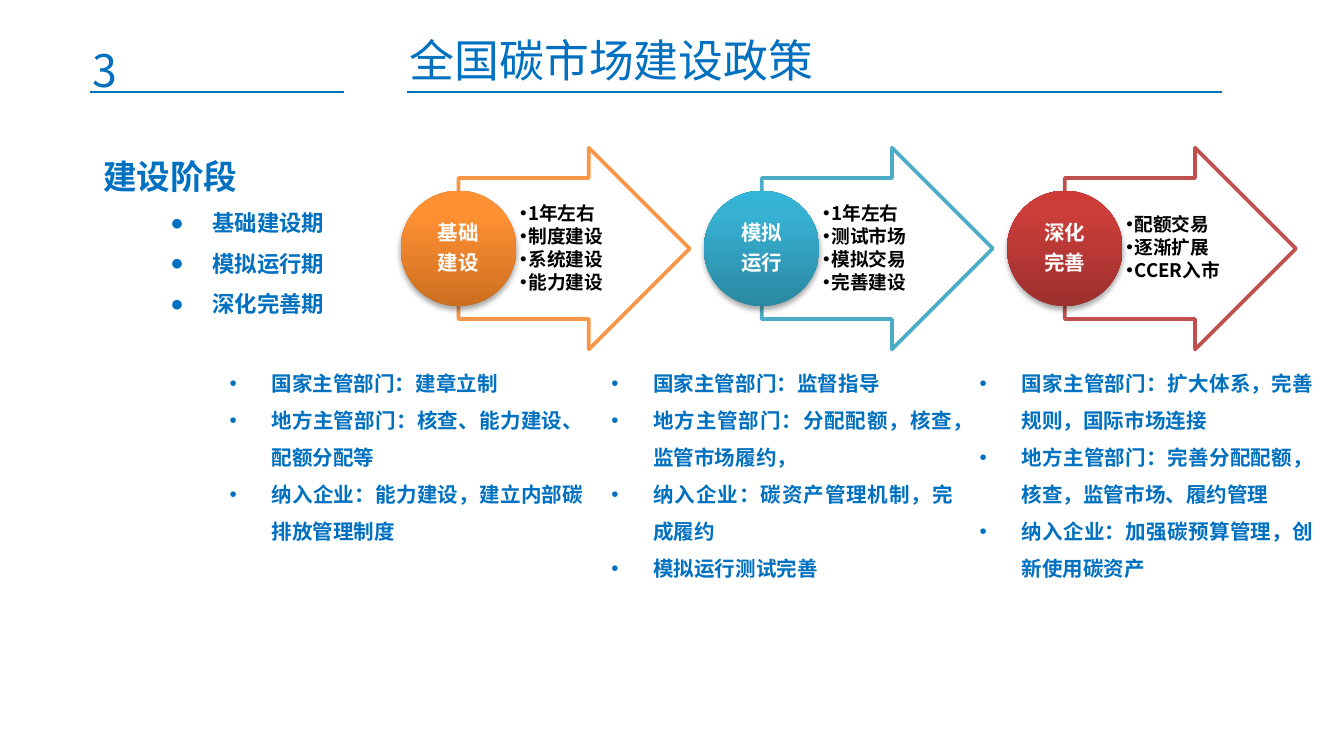
from lxml import etree
from pptx import Presentation
from pptx.dml.color import RGBColor
from pptx.enum.shapes import MSO_CONNECTOR, MSO_SHAPE
from pptx.enum.text import MSO_ANCHOR, PP_ALIGN
from pptx.oxml import parse_xml
from pptx.oxml.ns import qn
from pptx.util import Pt

STRAIGHT = MSO_CONNECTOR.STRAIGHT
ARROW, CIRCLE = MSO_SHAPE.RIGHT_ARROW, MSO_SHAPE.OVAL
LEFT, CENTER, JUSTIFY = PP_ALIGN.LEFT, PP_ALIGN.CENTER, PP_ALIGN.JUSTIFY
TOP, MIDDLE = MSO_ANCHOR.TOP, MSO_ANCHOR.MIDDLE
FONT, NUMBER_FONT = "Noto Sans CJK SC", "Noto Sans CJK JP"
BLUE, BLACK, WHITE = "0070C0", "000000", "FFFFFF"
NAMESPACE = 'xmlns:a="http://schemas.openxmlformats.org/drawingml/2006/main"'

TITLE = "全国碳市场建设政策"
SECTION_NUMBER = "3"
OVERVIEW = "建设阶段"
PERIODS = ["基础建设期", "模拟运行期", "深化完善期"]
STAGES = [
    {
        "name": ["基础", "建设"],
        "points": ["1年左右", "制度建设", "系统建设", "能力建设"],
        "line": "F79646",
        "gradient": [(0, "CC6E20"), (80, "FF9034"), (100, "FF9136")],
        "duties": [
            "国家主管部门：建章立制",
            "地方主管部门：核查、能力建设、配额分配等",
            "纳入企业：能力建设，建立内部碳排放管理制度",
        ],
        "duties_box": (115.9, 188.6, 203.8, 107.3),
    },
    {
        "name": ["模拟", "运行"],
        "points": ["1年左右", "测试市场", "模拟交易", "完善建设"],
        "line": "4BACC6",
        "gradient": [(0, "2A88A2"), (80, "37B1D2"), (100, "34B4D6")],
        "duties": [
            "国家主管部门：监督指导",
            "地方主管部门：分配配额，核查，监管市场履约，",
            "纳入企业：碳资产管理机制，完成履约",
            "模拟运行测试完善",
        ],
        "duties_box": (320.4, 188.6, 197.3, 146.9),
    },
    {
        "name": ["深化", "完善"],
        "points": ["配额交易", "逐渐扩展", "CCER入市"],
        "line": "C0504D",
        "gradient": [(0, "9C2F2D"), (80, "CB3E3A"), (100, "CE3B37")],
        "duties": [
            "国家主管部门：扩大体系，完善规则，国际市场连接",
            "地方主管部门：完善分配配额，核查，监管市场、履约管理",
            "纳入企业：加强碳预算管理，创新使用碳资产",
        ],
        "duties_box": (517.7, 188.6, 193, 127.4),
    },
]
RULES = [(48.2, 184.3), (218.2, 654.5)]
RULE_TOP = 49.4
STAGE_LEFT, STAGE_STEP = 214.7, 162.4
ARROW_TOP, ARROW_WIDTH, ARROW_HEIGHT = 79.2, 123.8, 108
DIAMETER = 61.9
NAME_SIZE = 43.8
POINTS_WIDTH, POINTS_HEIGHT = 60.5, 75.6


def color(value):
    """Turn a hex string into a colour."""
    return RGBColor.from_string(value)


def place(shape, left, top, width, height):
    """Move and size a shape, in points."""
    shape.left, shape.top = Pt(left), Pt(top)
    shape.width, shape.height = Pt(width), Pt(height)


def set_frame(shape, anchor=TOP, insets=(7.2, 3.6, 7.2, 3.6)):
    """Set wrapping, anchor and insets of a text frame."""
    frame = shape.text_frame
    frame.word_wrap = True
    frame.vertical_anchor = anchor
    frame.margin_left, frame.margin_top, frame.margin_right, frame.margin_bottom = map(Pt, insets)
    return frame


def add_paragraph(frame, text, size, value, bold=True, align=LEFT, spacing=1.0,
                  after=0, bullet=None, indent=0, hanging=0, font=FONT):
    """Write one paragraph, using the empty first one when it is free."""
    paragraph = frame.paragraphs[0]
    if paragraph.runs:
        paragraph = frame.add_paragraph()
    paragraph.alignment = align
    paragraph.line_spacing = spacing
    paragraph.space_before, paragraph.space_after = Pt(0), Pt(after)
    if bullet:
        properties = paragraph._p.get_or_add_pPr()
        properties.set("marL", str(Pt(indent)))
        properties.set("indent", str(Pt(-hanging)))
        etree.SubElement(properties, qn("a:buFont")).set("typeface", "Arial")
        etree.SubElement(properties, qn("a:buChar")).set("char", bullet)
    run = paragraph.add_run()
    run.text = text
    run.font.size, run.font.bold, run.font.name = Pt(size), bold, font
    run.font.color.rgb = color(value)
    etree.SubElement(run._r.get_or_add_rPr(), qn("a:ea")).set("typeface", font)


def add_text_box(slide, box, **frame_options):
    """Add a text box and return its frame."""
    return set_frame(slide.shapes.add_textbox(*map(Pt, box)), **frame_options)


def add_rule(slide, start, end):
    """Draw a horizontal heading rule."""
    rule = slide.shapes.add_connector(STRAIGHT, Pt(start), Pt(RULE_TOP), Pt(end), Pt(RULE_TOP))
    rule.line.color.rgb, rule.line.width = color(BLUE), Pt(1)
    etree.SubElement(rule._element.spPr, qn("a:effectLst"))


def add_circle(slide, left, top, stops):
    """Draw a circle with a vertical gradient and a soft shadow."""
    circle = slide.shapes.add_shape(CIRCLE, Pt(left), Pt(top), Pt(DIAMETER), Pt(DIAMETER))
    circle.line.fill.background()
    stop_xml = "".join(
        f'<a:gs pos="{position * 1000}"><a:srgbClr val="{value}"/></a:gs>' for position, value in stops)
    properties = circle._element.spPr
    properties.insert(2, parse_xml(
        f'<a:gradFill {NAMESPACE} rotWithShape="1"><a:gsLst>{stop_xml}</a:gsLst>'
        '<a:lin ang="16200000" scaled="0"/></a:gradFill>'))
    properties.append(parse_xml(
        f'<a:effectLst {NAMESPACE}><a:outerShdw blurRad="{Pt(3.1)}" dist="{Pt(1.8)}" dir="5400000" '
        f'rotWithShape="0"><a:srgbClr val="{BLACK}"><a:alpha val="35000"/></a:srgbClr>'
        '</a:outerShdw></a:effectLst>'))


def add_stage(slide, left, stage):
    """Draw one stage: arrow, points, circle and name."""
    middle = ARROW_TOP + ARROW_HEIGHT / 2
    arrow = slide.shapes.add_shape(
        ARROW, Pt(left + DIAMETER / 2), Pt(ARROW_TOP), Pt(ARROW_WIDTH), Pt(ARROW_HEIGHT))
    arrow.adjustments[0], arrow.adjustments[1] = 0.7, 0.5
    arrow.shadow.inherit = False
    arrow.fill.solid()
    arrow.fill.fore_color.rgb = color(WHITE)
    arrow.line.color.rgb, arrow.line.width = color(stage["line"]), Pt(2)

    points_box = (left + DIAMETER, middle - POINTS_HEIGHT / 2, POINTS_WIDTH, POINTS_HEIGHT)
    frame = add_text_box(slide, points_box, anchor=MIDDLE, insets=(2, 0.5, 0.5, 0.5))
    for point in stage["points"]:
        add_paragraph(frame, point, 10, BLACK, spacing=0.9, after=1.5,
                      bullet="•", indent=4.5, hanging=4.5)

    add_circle(slide, left, middle - DIAMETER / 2, stage["gradient"])
    name_box = (left + (DIAMETER - NAME_SIZE) / 2, middle - NAME_SIZE / 2, NAME_SIZE, NAME_SIZE)
    frame = add_text_box(slide, name_box, anchor=MIDDLE, insets=(0.9, 0.9, 0.9, 0.9))
    for line in stage["name"]:
        add_paragraph(frame, line, 11, WHITE, align=CENTER, spacing=0.9, after=3.85)


def main():
    """Build the slide."""
    presentation = Presentation()
    presentation.slide_width, presentation.slide_height = Pt(720), Pt(405)
    slide = presentation.slides.add_slide(presentation.slide_layouts[5])

    title = slide.shapes.title
    place(title, 212.4, 13.7, 442, 36)
    add_paragraph(set_frame(title), TITLE, 24, BLUE, bold=False)
    frame = add_text_box(slide, (42.5, 19.4, 141.8, 36))
    add_paragraph(frame, SECTION_NUMBER, 24, BLUE, bold=False, font=NUMBER_FONT)
    for start, end in RULES:
        add_rule(slide, start, end)

    frame = add_text_box(slide, (48.2, 69.1, 215.3, 103))
    add_paragraph(frame, OVERVIEW, 18, BLUE, spacing=1.5)
    for period in PERIODS:
        add_paragraph(frame, period, 12, BLUE, spacing=1.5, bullet="●", indent=58.5, hanging=22.5)

    for index, stage in enumerate(STAGES):
        add_stage(slide, STAGE_LEFT + index * STAGE_STEP, stage)
        frame = add_text_box(slide, stage["duties_box"])
        for duty in stage["duties"]:
            add_paragraph(frame, duty, 11, BLUE, align=JUSTIFY, spacing=1.5,
                          bullet="•", indent=22.5, hanging=22.5)

    presentation.save("out.pptx")


if __name__ == "__main__":
    main()
